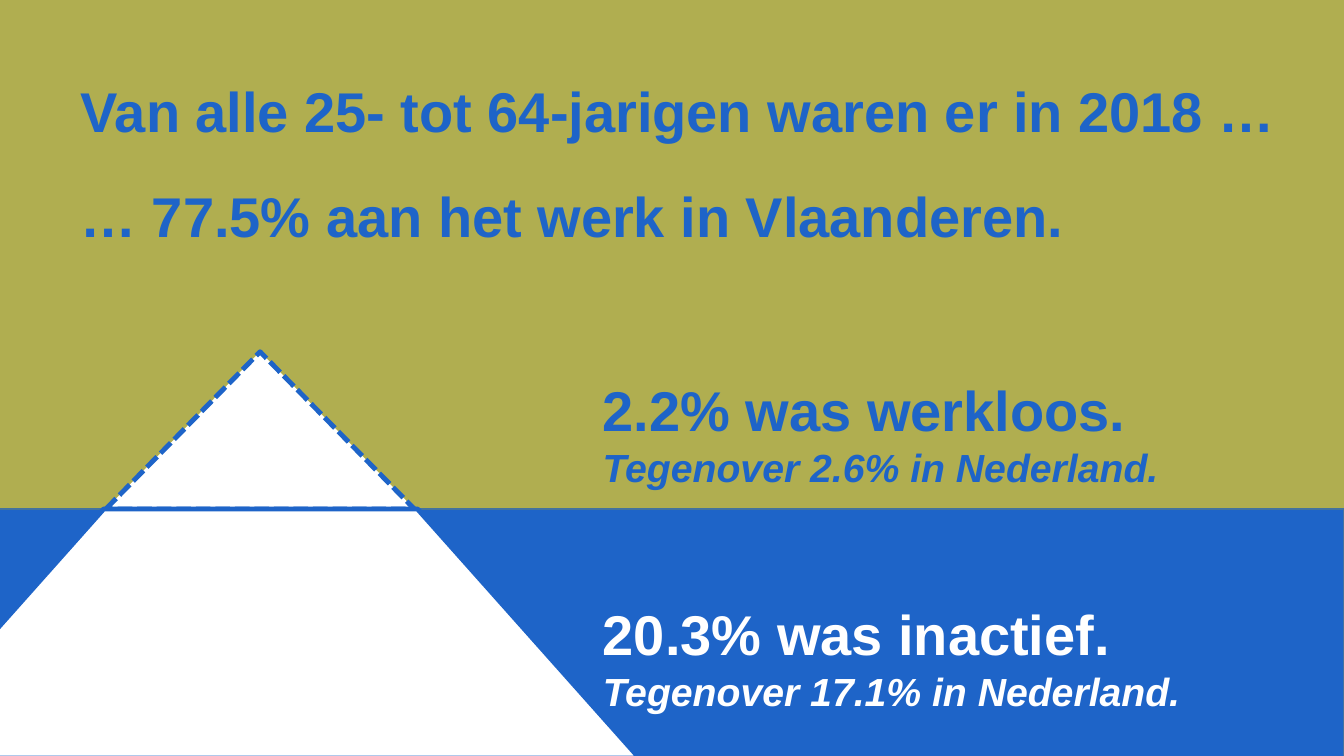
from pptx import Presentation
from pptx.dml.color import RGBColor
from pptx.enum.dml import MSO_LINE
from pptx.enum.shapes import MSO_SHAPE
from pptx.enum.text import MSO_ANCHOR, MSO_AUTO_SIZE, PP_ALIGN
from pptx.util import Inches, Pt

COLORS = {"olive": "B0AE50", "blue": "1E64C8", "white": "FFFFFF", "edge": "43739E"}
CELL = 0.1
HEADLINE = {"size": Pt(40), "bold": True, "italic": False}
COMPARISON = {"size": Pt(28), "bold": True, "italic": True}


def color(name):
    return RGBColor.from_string(COLORS[name])


class IcebergSlide:
    def __init__(self, deck, font):
        self.font = font
        self.page = deck.slides.add_slide(deck.slide_layouts[5])
        background = self.page.background.fill
        background.solid()
        background.fore_color.rgb = color("olive")

    def area(self, column, row, columns, rows):
        return [Inches(cells * CELL) for cells in (column, row, columns, rows)]

    def fill_text(self, box, lines, ink, frame_format):
        frame = box.text_frame
        for name, value in frame_format.items():
            setattr(frame, name, value)
        for index, (wording, style) in enumerate(lines):
            para = frame.paragraphs[0] if index == 0 else frame.add_paragraph()
            para.alignment = PP_ALIGN.LEFT
            span = para.add_run()
            span.text = wording
            for name, value in {"name": self.font, **style}.items():
                setattr(span.font, name, value)
            span.font.color.rgb = color(ink)

    def headline(self, box, wording):
        self.fill_text(box, [(wording, HEADLINE)], "blue", {
            "word_wrap": False,
            "vertical_anchor": MSO_ANCHOR.MIDDLE,
            "auto_size": MSO_AUTO_SIZE.SHAPE_TO_FIT_TEXT,
        })

    def title(self, grid, wording):
        box = self.page.shapes.title
        box.left, box.top, box.width, box.height = self.area(*grid)
        self.headline(box, wording)

    def subtitle(self, grid, wording):
        self.headline(self.page.shapes.add_textbox(*self.area(*grid)), wording)

    def statement(self, grid, share, comparison, ink):
        box = self.page.shapes.add_textbox(*self.area(*grid))
        lines = [(share, HEADLINE), (comparison, COMPARISON)]
        self.fill_text(box, lines, ink, {
            "word_wrap": True,
            "vertical_anchor": MSO_ANCHOR.TOP,
        })

    def shape(self, kind, grid, fill, edge, weight, dash=None, slope=None):
        shape = self.page.shapes.add_shape(kind, *self.area(*grid))
        shape.shadow.inherit = False
        shape.fill.solid()
        shape.fill.fore_color.rgb = color(fill)
        shape.line.color.rgb = color(edge)
        shape.line.width = Pt(weight)
        if dash is not None:
            shape.line.dash_style = dash
        if slope is not None:
            shape.adjustments[0] = slope


def main():
    deck = Presentation()
    deck.slide_width, deck.slide_height = Inches(13.33), Inches(7.5)
    slide = IcebergSlide(deck, "Arial")
    waterline, depth = 50.5, 24.7
    margin, text_column = 7, 58.8

    slide.shape(MSO_SHAPE.RECTANGLE, (-1.3, waterline, 134.6, depth), "blue", "edge", 1)
    slide.title((margin, 7.1, 121.8, 7.7),
                "Van alle 25- tot 64-jarigen waren er in 2018 …")
    slide.subtitle((margin, 17.5, 100.5, 7.7), "… 77.5% aan het werk in Vlaanderen.")
    slide.shape(MSO_SHAPE.ISOSCELES_TRIANGLE, (10.5, waterline - 15.6, 30.6, 15.6),
                "white", "blue", 3.5, dash=MSO_LINE.SQUARE_DOT)
    slide.statement((text_column, 36.8, 70, 19.2), "2.2% was werkloos.",
                    "Tegenover 2.6% in Nederland.", "blue")
    slide.shape(MSO_SHAPE.TRAPEZOID, (-11.7, waterline, 75.1, depth),
                "white", "blue", 3.5, slope=0.89)
    slide.statement((text_column, 59, 68.5, 19.2), "20.3% was inactief.",
                    "Tegenover 17.1% in Nederland.", "white")
    deck.save("out.pptx")


if __name__ == "__main__":
    main()
